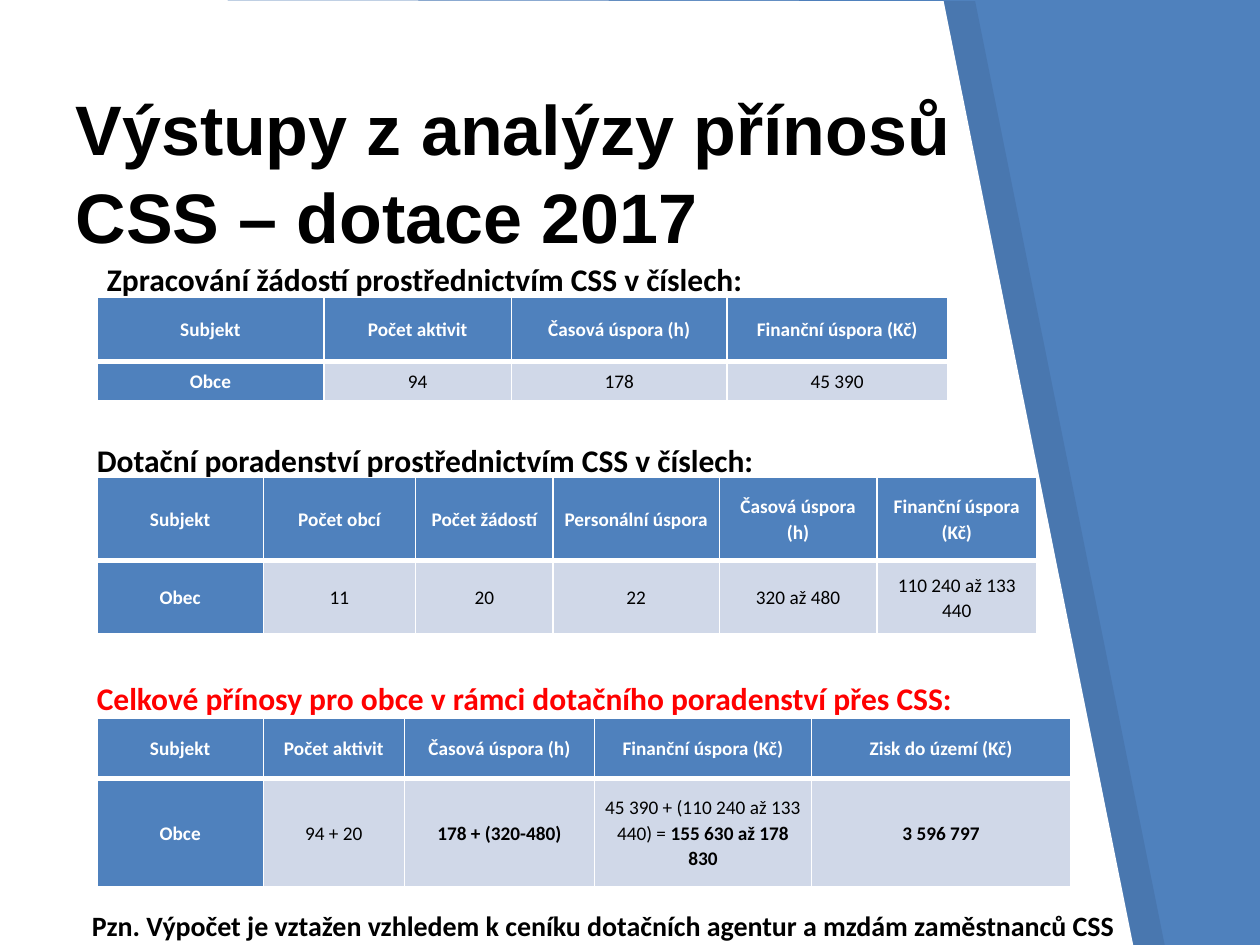
from dataclasses import dataclass

from lxml import etree
from pptx import Presentation
from pptx import util as u
from pptx.dml.color import RGBColor
from pptx.enum import text
from pptx.oxml import ns


@dataclass(frozen=True)
class Theme:
    blue: RGBColor = RGBColor(0x4F, 0x81, 0xBD)
    pale: RGBColor = RGBColor(0xD0, 0xD8, 0xE8)
    white: RGBColor = RGBColor(255, 255, 255)
    black: RGBColor = RGBColor(0, 0, 0)
    red: RGBColor = RGBColor(255, 0, 0)
    title_font: str = "Arial"
    body_font: str = "Calibri"
    title_size: int = 40
    heading_size: int = 18
    note_size: int = 16
    cell_size: int = 11
    spacing: float = 1.07


theme = Theme()


def format_run(r, size, color, bold=True, name=theme.body_font):
    r.font.name = name
    r.font.size = u.Pt(size)
    r.font.bold = bold
    r.font.color.rgb = color


def add_panel(s, box, color, alpha=None):
    left, top, width, height = box
    slant = 1.51
    points = [(left, top), (left, top + height),
              (left + width, top + height), (left + width - slant, top + 0.01)]
    points = [(u.Inches(x), u.Inches(y)) for x, y in points]
    builder = s.shapes.build_freeform(*points[0])
    builder.add_line_segments(points[1:], close=True)
    sp = builder.convert_to_shape()
    sp.shadow.inherit = False
    sp.line.fill.background()
    sp.fill.solid()
    sp.fill.fore_color.rgb = color
    if alpha is not None:
        clr = sp._element.spPr.find(".//" + ns.qn("a:srgbClr"))
        etree.SubElement(clr, ns.qn("a:alpha")).set("val", str(alpha * 1000))
    s.shapes.title._element.addprevious(sp._element)


def set_title(s, box, words):
    sp = s.shapes.title
    sp.left, sp.top, sp.width, sp.height = map(u.Inches, box)
    tf = sp.text_frame
    tf.text = words
    tf.auto_size = text.MSO_AUTO_SIZE.NONE
    tf.vertical_anchor = text.MSO_ANCHOR.MIDDLE
    p = tf.paragraphs[0]
    p.alignment = text.PP_ALIGN.LEFT
    p.line_spacing = 1.05
    format_run(p.runs[0], theme.title_size, theme.black, name=theme.title_font)


def add_line(s, box, words, size=theme.heading_size, color=theme.black):
    tf = s.shapes.add_textbox(*map(u.Inches, box)).text_frame
    tf.word_wrap = True
    tf.text = words
    p = tf.paragraphs[0]
    p.alignment = text.PP_ALIGN.JUSTIFY
    p.line_spacing = theme.spacing
    format_run(p.runs[0], size, color)


def set_borders(cell, widths):
    tcPr = cell._tc.get_or_add_tcPr()
    for side, width in widths.items():
        ln = etree.SubElement(tcPr, ns.qn("a:ln" + side), w=str(u.Pt(width)))
        fill = etree.SubElement(ln, ns.qn("a:solidFill"))
        etree.SubElement(fill, ns.qn("a:srgbClr"), val=str(theme.white))


def fill_cell(cell, words, is_header, is_label):
    set_borders(cell, {"L": 1, "R": 1, "T": 1 if is_header else 3,
                       "B": 3 if is_header else 1})
    strong = is_header or is_label
    cell.fill.solid()
    cell.fill.fore_color.rgb = theme.blue if strong else theme.pale
    cell.margin_left = cell.margin_right = u.Inches(0.07)
    cell.margin_top = cell.margin_bottom = 0
    cell.vertical_anchor = text.MSO_ANCHOR.MIDDLE
    p = cell.text_frame.paragraphs[0]
    p.alignment = text.PP_ALIGN.CENTER
    p.line_spacing = theme.spacing
    plain, _, bold = words.partition("|")
    for part, heavy in ((plain, strong), (bold, True)):
        if part:
            r = p.add_run()
            r.text = part
            format_run(r, theme.cell_size, theme.white if strong else theme.black, heavy)


def add_grid(s, left, top, widths, heights, rows):
    frame = s.shapes.add_table(len(rows), len(widths), u.Inches(left), u.Inches(top),
                               u.Inches(sum(widths)), u.Inches(sum(heights)))
    table = frame.table
    for column, width in zip(table.columns, widths):
        column.width = u.Inches(width)
    for i, (height, row) in enumerate(zip(heights, rows)):
        table.rows[i].height = u.Inches(height)
        for j, words in enumerate(row):
            fill_cell(table.cell(i, j), words, i == 0, j == 0)


def build_slide(prs):
    s = prs.slides.add_slide(prs.slide_layouts[5])
    s.background.fill.solid()
    s.background.fill.fore_color.rgb = theme.blue
    add_panel(s, (0.25, 0, 9, 7.53), theme.black, alpha=7)
    add_panel(s, (0, 0, 9, 7.53), theme.white)
    set_title(s, (0.5, 0.99, 7.73, 0.71), "Výstupy z analýzy přínosů CSS – dotace 2017")

    add_grid(s, 0.77, 2.36, [1.8, 1.49, 1.71, 1.75], [0.51, 0.31], [
        ["Subjekt", "Počet aktivit", "Časová úspora (h)", "Finanční úspora (Kč)"],
        ["Obce", "94", "178", "45 390"],
    ])
    add_grid(s, 0.77, 3.79, [1.32, 1.21, 1.09, 1.32, 1.25, 1.27], [0.66, 0.58], [
        ["Subjekt", "Počet obcí", "Počet žádostí", "Personální úspora",
         "Časová úspora (h)", "Finanční úspora (Kč)"],
        ["Obec", "11", "20", "22", "320 až 480", "110 240 až 133 440"],
    ])
    add_grid(s, 0.77, 5.7, [1.32, 1.12, 1.51, 1.72, 2.06], [0.48, 0.86], [
        ["Subjekt", "Počet aktivit", "Časová úspora (h)", "Finanční úspora (Kč)",
         "Zisk do území (Kč)"],
        ["Obce", "94 + 20", "|178 + (320-480)",
         "45 390 + (110 240 až 133 440) = |155 630 až 178 830", "|3 596 797"],
    ])

    add_line(s, (0.75, 1.99, 6.75, 0.41),
             "Zpracování žádostí prostřednictvím CSS v číslech:")
    add_line(s, (0.67, 3.43, 6.83, 0.41),
             "Dotační poradenství prostřednictvím CSS v číslech:")
    add_line(s, (0.67, 5.32, 7.3, 0.4),
             "Celkové přínosy pro obce v rámci dotačního poradenství přes CSS:",
             color=theme.red)
    add_line(s, (0.63, 7.14, 8.62, 0.38),
             "Pzn. Výpočet je vztažen vzhledem k ceníku dotačních agentur a mzdám "
             "zaměstnanců CSS", size=theme.note_size)


def main():
    prs = Presentation()
    prs.slide_width, prs.slide_height = u.Inches(10), u.Inches(7.5)
    build_slide(prs)
    prs.save("out.pptx")


if __name__ == "__main__":
    main()
